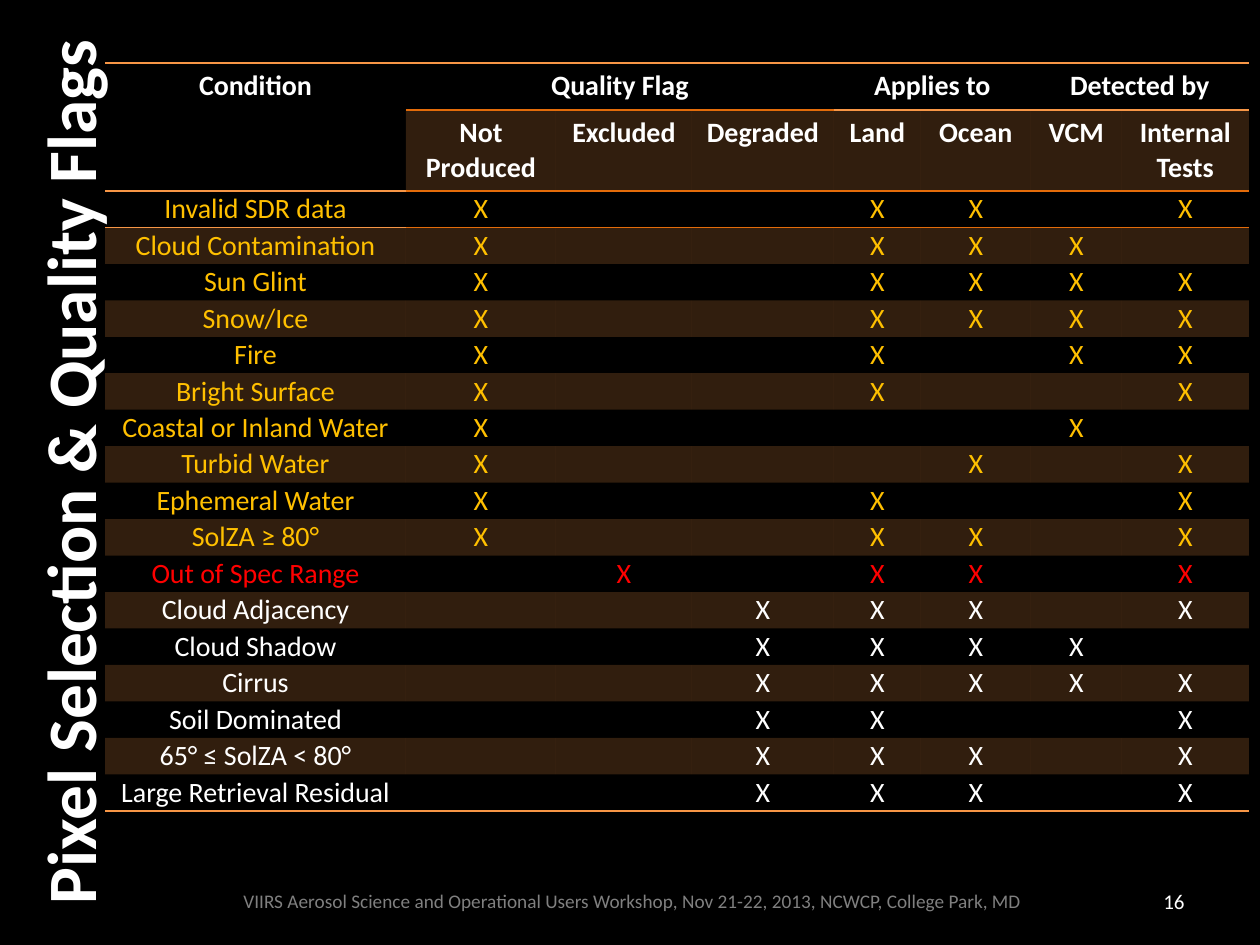
import pptx
import pptx.util
import pptx.dml.color
import pptx.enum.text
import pptx.oxml.ns
import lxml.etree

RGB = pptx.dml.color.RGBColor
ALIGN = pptx.enum.text.PP_ALIGN
MIDDLE = pptx.enum.text.MSO_ANCHOR.MIDDLE
BLACK = RGB(0, 0, 0)
WHITE = RGB(255, 255, 255)
GREY = RGB(128, 128, 128)
GOLD = RGB(255, 192, 0)
RED = RGB(255, 0, 0)
LIGHT = RGB(0xF7, 0x96, 0x46)
DARK = RGB(0xE4, 0x6C, 0x0A)
FONT = "Calibri"
SCALE = 914400 / 126
NO_GRID = "{2D5ABB26-0587-4C30-8999-92F81FD0307C}"

# Table layout, in px
WIDTHS = [301, 150, 136, 142, 87, 110, 91, 127]
HEADS = [47, 81]
BODY = 620

# Heading text, first column, last column, colour of the line below
GROUPS = [("Quality Flag", 1, 3, DARK), ("Applies to", 4, 5, LIGHT),
          ("Detected by", 6, 7, LIGHT)]
NAMES = ["Not Produced", "Excluded", "Degraded", "Land", "Ocean", "VCM",
         "Internal Tests"]

# Condition, marks in the seven columns, text colour
ROWS = [
    ("Invalid SDR data", "X--XX-X", GOLD),
    ("Cloud Contamination", "X--XXX-", GOLD),
    ("Sun Glint", "X--XXXX", GOLD),
    ("Snow/Ice", "X--XXXX", GOLD),
    ("Fire", "X--X-XX", GOLD),
    ("Bright Surface", "X--X--X", GOLD),
    ("Coastal or Inland Water", "X----X-", GOLD),
    ("Turbid Water", "X---X-X", GOLD),
    ("Ephemeral Water", "X--X--X", GOLD),
    ("SolZA ≥ 80°", "X--XX-X", GOLD),
    ("Out of Spec Range", "-X-XX-X", RED),
    ("Cloud Adjacency", "--XXX-X", WHITE),
    ("Cloud Shadow", "--XXXX-", WHITE),
    ("Cirrus", "--XXXXX", WHITE),
    ("Soil Dominated", "--XX--X", WHITE),
    ("65° ≤ SolZA < 80°", "--XXX-X", WHITE),
    ("Large Retrieval Residual", "--XXX-X", WHITE),
]


def px(n):
    return pptx.util.Emu(round(n * SCALE))


def tag(parent, name, **attrs):
    return lxml.etree.SubElement(parent, pptx.oxml.ns.qn(name), **attrs)


def write(frame, text, size, color, bold=False, align=ALIGN.CENTER):
    para = frame.paragraphs[0]
    para.alignment = align
    run = para.add_run()
    run.text = text
    font = run.font
    font.name, font.size, font.bold = FONT, pptx.util.Pt(size), bold
    font.color.rgb = color


def add_title(slide, text):
    title = slide.shapes.title
    title.left, title.top = px(-404), px(404)
    title.width, title.height = px(945), px(136)
    title.rotation = 270
    title.text_frame.vertical_anchor = MIDDLE
    title.text_frame.word_wrap = True
    write(title.text_frame, text, 39.6, WHITE, True)


def add_note(slide, text, left, width, size, color, align):
    box = slide.shapes.add_textbox(px(left), px(876), px(width), px(50))
    box.text_frame.word_wrap = True
    box.text_frame.vertical_anchor = MIDDLE
    write(box.text_frame, text, size, color, align=align)


def rule(cell, side, color):
    line = tag(cell._tc.get_or_add_tcPr(), "a:ln" + side, w="12700")
    tag(tag(line, "a:solidFill"), "a:srgbClr", val=str(color))


def paint(cell, tint):
    # Fills come after lines in the cell properties
    if not tint:
        cell.fill.background()
        return
    cell.fill.solid()
    cell.fill.fore_color.rgb = LIGHT
    for clr in cell._tc.tcPr.find(pptx.oxml.ns.qn("a:solidFill")):
        tag(clr, "a:alpha", val="20000")


def fill_head(table):
    last = len(HEADS) - 1
    write(table.cell(0, 0).text_frame, "Condition", 16, WHITE, True)
    for row in range(len(HEADS)):
        rule(table.cell(row, 0), "T", LIGHT) if row == 0 else None
        rule(table.cell(row, 0), "B", LIGHT)
        paint(table.cell(row, 0), False)
    table.cell(0, 0).merge(table.cell(last, 0))

    for text, start, end, color in GROUPS:
        write(table.cell(0, start).text_frame, text, 16, WHITE, True)
        for col in range(start, end + 1):
            cell = table.cell(0, col)
            rule(cell, "T", LIGHT)
            rule(cell, "B", color)
            paint(cell, False)
            rule(table.cell(last, col), "T", color)
        table.cell(0, start).merge(table.cell(0, end))

    for col, name in enumerate(NAMES, 1):
        cell = table.cell(last, col)
        write(cell.text_frame, name, 16, WHITE, True)
        rule(cell, "B", DARK)
        paint(cell, True)


def fill_body(table):
    for num, (name, marks, color) in enumerate(ROWS):
        for col, text in enumerate([name, *marks]):
            cell = table.cell(num + len(HEADS), col)
            cell.margin_left = cell.margin_right = px(9)
            cell.margin_top = cell.margin_bottom = 0
            cell.vertical_anchor = MIDDLE
            if text == "-":
                # Keeps an empty cell as low as its row
                tag(cell.text_frame.paragraphs[0]._p, "a:endParaRPr", sz="1600")
            else:
                write(cell.text_frame, text, 16, color)
            if num == 0:
                rule(cell, "T", DARK if col else LIGHT)
            if num == len(ROWS) - 1:
                rule(cell, "B", LIGHT)
            paint(cell, num % 2 == 1)


def add_grid(slide):
    highs = HEADS + [BODY / len(ROWS)] * len(ROWS)
    frame = slide.shapes.add_table(len(highs), len(WIDTHS), px(105), px(63),
                                   px(sum(WIDTHS)), px(sum(highs)))
    table = frame.table
    table.first_row = table.horz_banding = False
    table._tbl.tblPr.find(pptx.oxml.ns.qn("a:tableStyleId")).text = NO_GRID
    for col, wide in zip(table.columns, WIDTHS):
        col.width = px(wide)
    for row, high in zip(table.rows, highs):
        row.height = px(high)
    fill_head(table)
    fill_body(table)


def main():
    deck = pptx.Presentation()
    deck.slide_width, deck.slide_height = px(1260), px(945)
    slide = deck.slides.add_slide(deck.slide_layouts[5])
    slide.background.fill.solid()
    slide.background.fill.fore_color.rgb = BLACK

    add_title(slide, "Pixel Selection & Quality Flags")
    # Footer and slide number
    add_note(slide, "VIIRS Aerosol Science and Operational Users Workshop, "
             "Nov 21-22, 2013, NCWCP, College Park, MD",
             231, 809, 11, GREY, ALIGN.LEFT)
    add_note(slide, "16", 1061, 136, 12, WHITE, ALIGN.RIGHT)
    add_grid(slide)
    deck.save("out.pptx")


if __name__ == "__main__":
    main()
